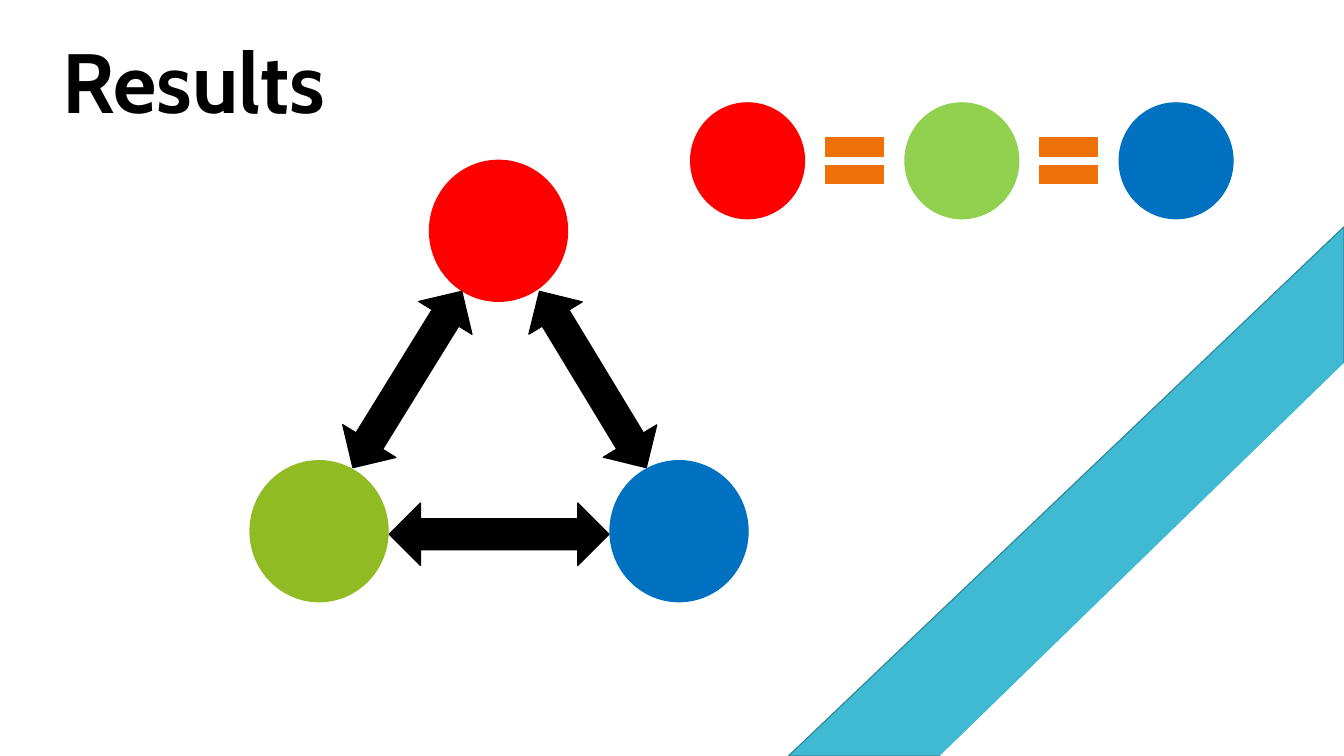
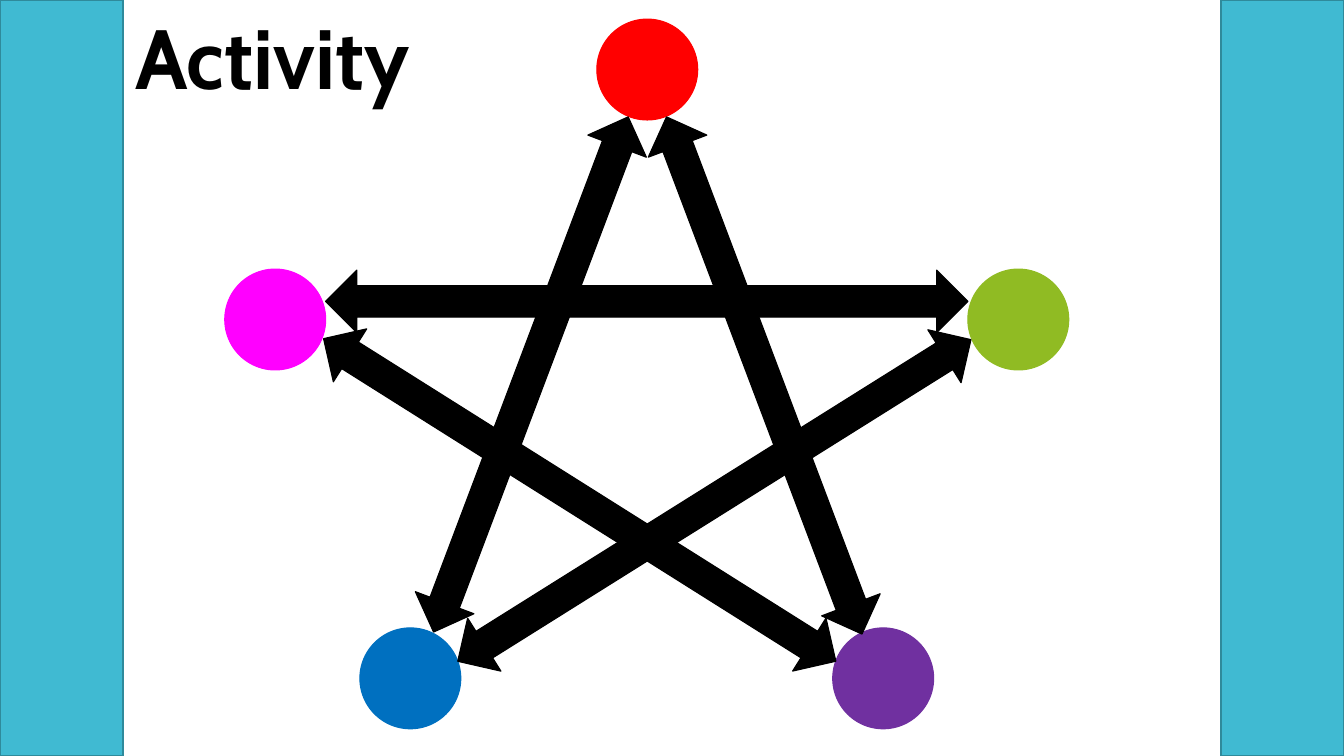
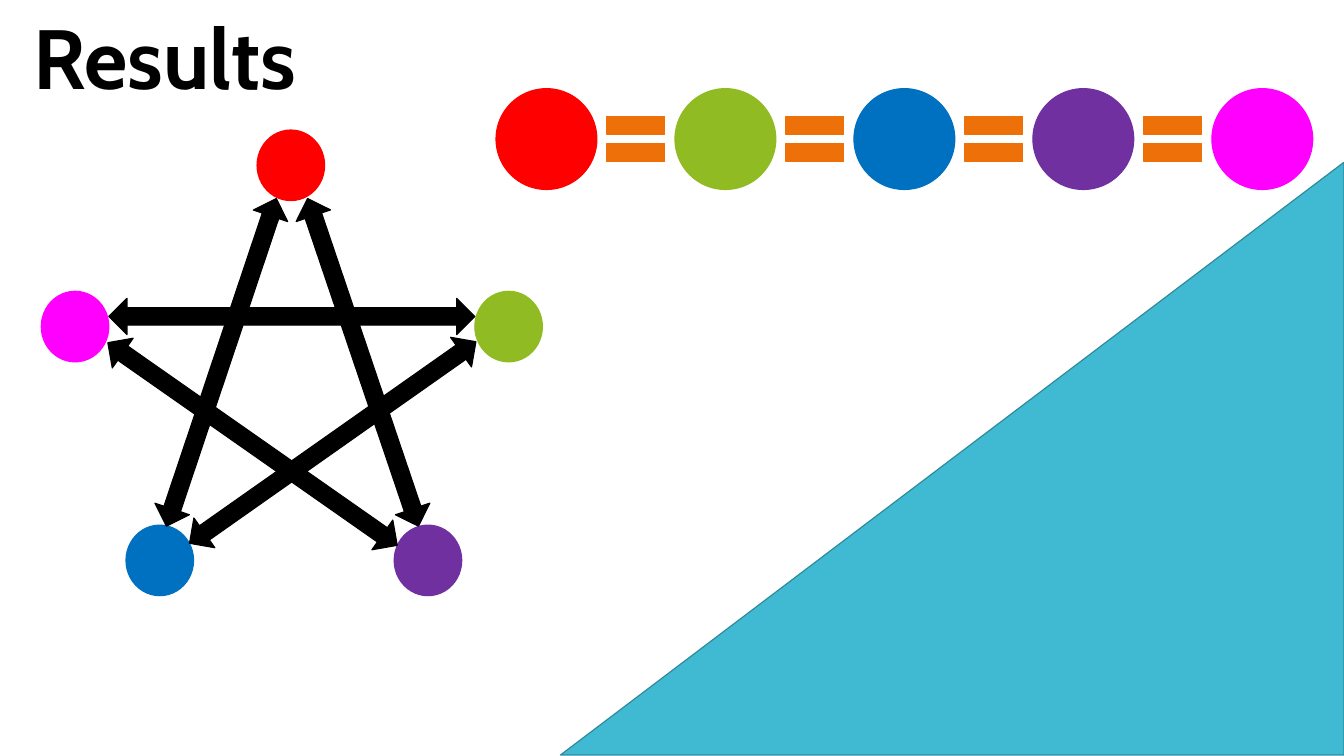
import math

import pptx
import pptx.dml.color
import pptx.enum.shapes
import pptx.enum.text
import pptx.util

Inches = pptx.util.Inches
Kind = pptx.enum.shapes.MSO_SHAPE

RED, BLUE, GREEN, LIME = "FF0000", "0070C0", "90BB23", "92D050"
PURPLE, PINK, ORANGE = "7030A0", "FF00FF", "EE7008"
BLACK, WHITE, TEAL, EDGE = "000000", "FFFFFF", "40BAD2", "2F8A9B"
EQUAL = (0.78, 0.77)
TITLE = {"name": "Cabin", "size": pptx.util.Pt(60), "bold": True}
FRAME = {
    "word_wrap": False,
    "auto_size": pptx.enum.text.MSO_AUTO_SIZE.SHAPE_TO_FIT_TEXT,
    "vertical_anchor": pptx.enum.text.MSO_ANCHOR.TOP,
}

# dots: colour, left, top; arrows: tip to tip; row: left, top, pitch, size, colours
SLIDES = [
    {
        "title": ("Results", 0.52, 0.24, 2.85),
        "bands": [
            (Kind.RIGHT_TRIANGLE, (7.82, 2.25, 5.51, 5.25), TEAL, EDGE),
            (Kind.RIGHT_TRIANGLE, (9.33, 3.61, 4, 3.89), WHITE, WHITE),
        ],
        "size": (1.37, 1.4),
        "dots": [(RED, 4.26, 1.59), (BLUE, 6.05, 4.57), (GREEN, 2.48, 4.57)],
        "thick": 0.62,
        "shaft": 0.5,
        "arrows": [
            (4.58, 2.89, 3.5, 4.64),
            (5.35, 2.89, 6.41, 4.64),
            (3.86, 5.3, 6.04, 5.3),
        ],
        "row": (6.85, 1.02, 2.125, (1.13, 1.15), [RED, LIME, BLUE]),
    },
    {
        "title": ("Activity", 1.24, 0, 3.03),
        "bands": [
            (Kind.RECTANGLE, (0, 0, 1.22, 7.5), TEAL, EDGE),
            (Kind.RECTANGLE, (12.11, 0, 1.22, 7.5), TEAL, EDGE),
        ],
        "size": (1, 1),
        "dots": [
            (RED, 5.92, 0.19),
            (PINK, 2.23, 2.67),
            (BLUE, 3.57, 6.23),
            (PURPLE, 8.26, 6.23),
            (GREEN, 9.6, 2.67),
        ],
        "thick": 0.62,
        "shaft": 0.5,
        "arrows": [
            (6.23, 1.16, 4.3, 6.27),
            (6.61, 1.16, 8.55, 6.29),
            (9.63, 3.37, 4.54, 6.56),
            (3.21, 3.36, 8.29, 6.56),
            (3.23, 2.99, 9.6, 2.99),
        ],
    },
    {
        "title": ("Results", 0.23, 0, 2.85),
        "bands": [(Kind.RIGHT_TRIANGLE, (5.56, 1.61, 7.77, 5.88), TEAL, EDGE)],
        "size": (0.67, 0.7),
        "dots": [
            (RED, 2.55, 1.29),
            (GREEN, 4.71, 2.89),
            (PINK, 0.41, 2.89),
            (PURPLE, 3.91, 5.21),
            (BLUE, 1.25, 5.21),
        ],
        "thick": 0.36,
        "shaft": 0.475,
        "arrows": [
            (2.74, 1.97, 1.65, 5.22),
            (3.05, 1.97, 4.15, 5.22),
            (1.07, 3.4, 3.94, 5.41),
            (4.72, 3.39, 1.88, 5.39),
            (1.08, 3.14, 4.71, 3.14),
        ],
        "row": (4.92, 0.88, 1.775, (1, 1), [RED, GREEN, BLUE, PURPLE, PINK]),
    },
]


def tint(text):
    return pptx.dml.color.RGBColor.from_string(text)


def draw(slide, kind, box, fill, line=None):
    shape = slide.shapes.add_shape(kind, *map(Inches, box))
    shape.shadow.inherit = False
    shape.fill.solid()
    shape.fill.fore_color.rgb = tint(fill)
    shape.line.color.rgb = tint(line or fill)
    shape.line.width = pptx.util.Pt(0.85)
    if kind == Kind.RIGHT_TRIANGLE:
        shape._element.spPr.xfrm.set("flipH", "1")
    return shape


def arrow(slide, ends, thick, shaft):
    """Lay a two-headed arrow from tip to tip."""
    x1, y1, x2, y2 = ends
    span = math.hypot(x2 - x1, y2 - y1)
    box = ((x1 + x2 - span) / 2, (y1 + y2 - thick) / 2, span, thick)
    shape = draw(slide, Kind.LEFT_RIGHT_ARROW, box, BLACK)
    shape.adjustments[0] = shaft
    shape.rotation = math.degrees(math.atan2(y2 - y1, x2 - x1))


def chain(slide, left, top, pitch, size, hues):
    """Set circles in a row with an equals sign centred in each gap."""
    wide, high = size
    for i, hue in enumerate(hues):
        x = left + i * pitch
        draw(slide, Kind.OVAL, (x, top, wide, high), hue)
        if i:
            sign = (x - (pitch - wide + EQUAL[0]) / 2, top + (high - EQUAL[1]) / 2)
            draw(slide, Kind.MATH_EQUAL, sign + EQUAL, ORANGE)


def head(slide, text, left, top, wide):
    title = slide.shapes.title
    title.left, title.top = Inches(left), Inches(top)
    title.width, title.height = Inches(wide), Inches(1.11)
    frame = title.text_frame
    frame.text = text
    for key, value in FRAME.items():
        setattr(frame, key, value)
    line = frame.paragraphs[0]
    line.alignment = pptx.enum.text.PP_ALIGN.LEFT
    font = line.runs[0].font
    for key, value in TITLE.items():
        setattr(font, key, value)
    font.color.rgb = tint(BLACK)


def main():
    deck = pptx.Presentation()
    deck.slide_width, deck.slide_height = Inches(13.33), Inches(7.5)
    for page in SLIDES:
        slide = deck.slides.add_slide(deck.slide_layouts[5])
        head(slide, *page["title"])
        for band in page["bands"]:
            draw(slide, *band)
        for hue, left, top in page["dots"]:
            draw(slide, Kind.OVAL, (left, top) + page["size"], hue)
        for ends in page["arrows"]:
            arrow(slide, ends, page["thick"], page["shaft"])
        if "row" in page:
            chain(slide, *page["row"])
    deck.save("out.pptx")


if __name__ == "__main__":
    main()
